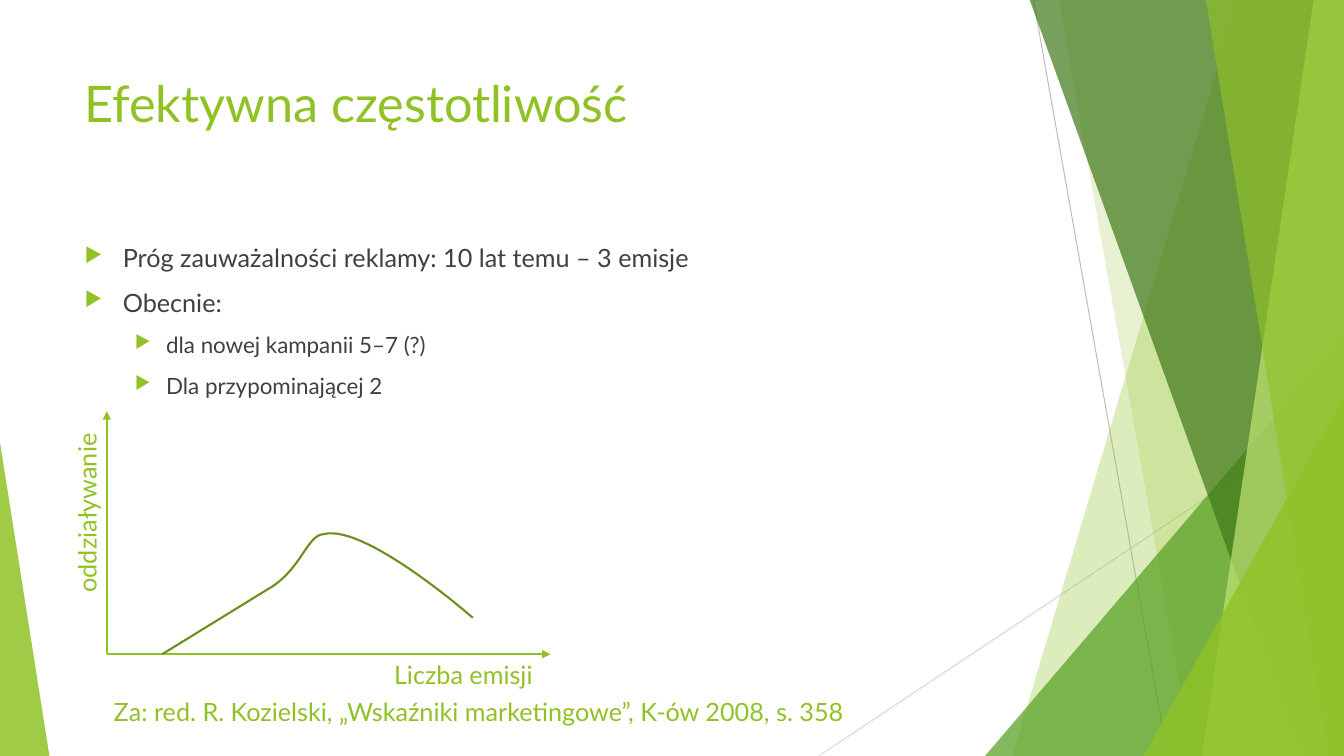
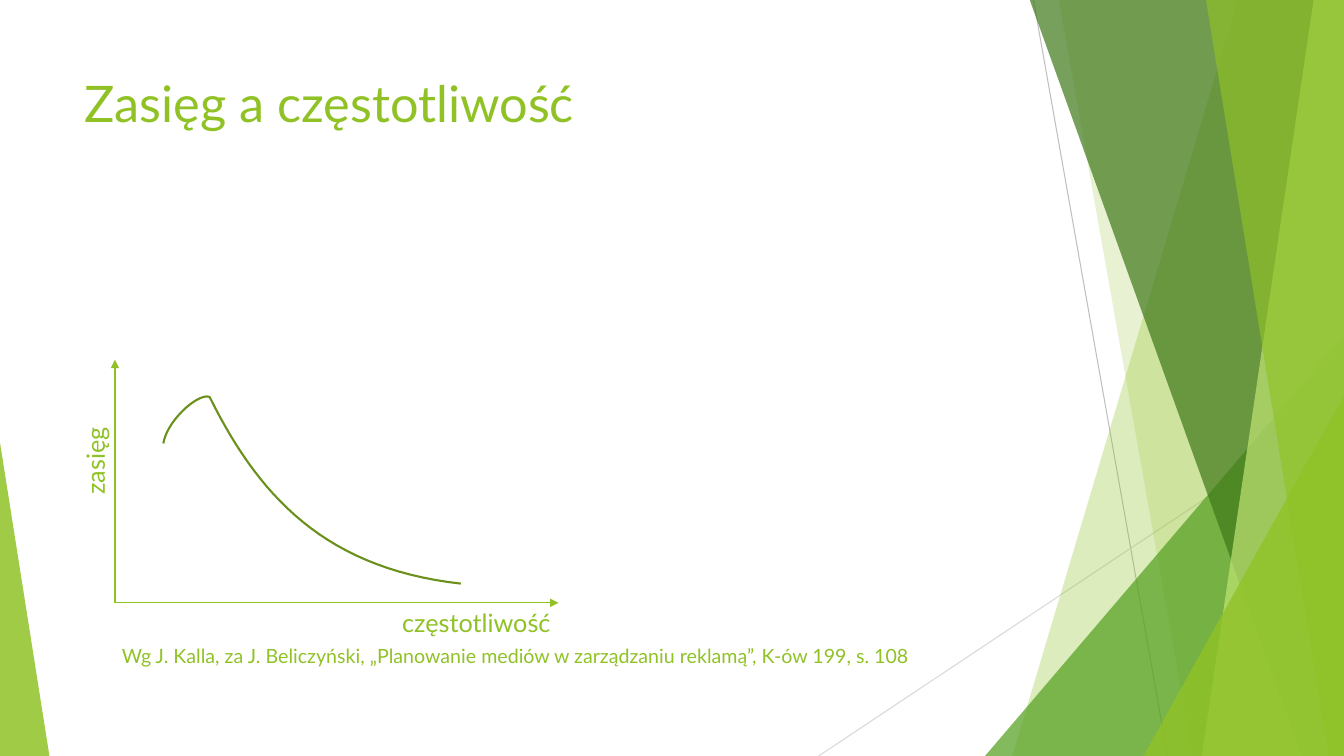
"""Build two slides on advertising frequency and reach with hand-drawn response curves."""
from dataclasses import dataclass
from math import comb

from lxml import etree
from pptx import Presentation
from pptx.dml.color import RGBColor
from pptx.enum.shapes import MSO_CONNECTOR, MSO_SHAPE
from pptx.enum.text import MSO_ANCHOR, MSO_AUTO_SIZE
from pptx.oxml.ns import qn
from pptx.util import Inches, Pt

STRAIGHT = MSO_CONNECTOR.STRAIGHT
TRIANGLE = MSO_SHAPE.ISOSCELES_TRIANGLE
TOP = MSO_ANCHOR.TOP
FIT_SHAPE = MSO_AUTO_SIZE.SHAPE_TO_FIT_TEXT
FIXED_SHAPE = MSO_AUTO_SIZE.NONE

WIDTH, HEIGHT = 13.33, 7.5
BAND_TOP = -0.01
FONT = "Lato"
COLORS = {
    "accent": "90C226",
    "leaf": "54A021",
    "forest": "3F7819",
    "pale": "C0E474",
    "curve": "6B901C",
    "body": "404040",
    "gray": "BFBFBF",
    "light_gray": "D9D9D9",
}
LABEL_FRAME = {"word_wrap": False, "auto_size": FIT_SHAPE, "vertical_anchor": TOP}
BLOCK_FRAME = {"word_wrap": True, "auto_size": FIXED_SHAPE, "vertical_anchor": TOP}
AXIS_WIDTH, AXIS_HEIGHT = 4.4, 2.41
LABEL_HEIGHT = 0.4

Point = tuple[float, float]


@dataclass(frozen=True)
class Ray:
    start: Point
    end: Point
    color: str


@dataclass(frozen=True)
class Band:
    top_left: float
    bottom_left: float
    color: str
    opacity: int


@dataclass(frozen=True)
class Wedge:
    left: float
    top: float
    width: float
    apex: float
    color: str
    opacity: int


@dataclass(frozen=True)
class Bullet:
    text: str
    level: int = 0


@dataclass(frozen=True)
class BulletStyle:
    size: int
    margin: float
    hanging: float


@dataclass(frozen=True)
class Label:
    text: str
    width: float


@dataclass(frozen=True)
class Source:
    text: str
    left: float
    top: float
    width: float
    height: float
    size: int


@dataclass(frozen=True)
class Diagram:
    origin: Point
    vertical: Label
    horizontal: Label
    curve_start: Point
    curve_segments: tuple[tuple[Point, ...], ...]


@dataclass(frozen=True)
class Page:
    title: str
    bullets: tuple[Bullet, ...]
    diagram: Diagram
    source: Source


RAYS = (
    Ray((10.25, 0), (11.58, HEIGHT), "gray"),
    Ray((WIDTH, 4.03), (8.12, HEIGHT), "light_gray"),
)
BACKDROP = (
    Band(12.28, 10.04, "accent", 30),
    Band(10.5, 11.83, "accent", 20),
    Wedge(9.77, 3.33, 3.56, 1, "leaf", 72),
    Band(10.21, 12.91, "forest", 70),
    Band(13.03, 11.92, "pale", 70),
    Band(11.96, 13.18, "accent", 65),
    Wedge(11.34, 3.93, 1.99, 1, "accent", 80),
    Wedge(0, 4.39, 0.49, 0, "accent", 85),
)
BULLET_STYLES = (BulletStyle(18, 0.38, 0.38), BulletStyle(16, 0.81, 0.31))

PAGES = (
    Page(
        "Efektywna częstotliwość",
        (
            Bullet("Próg zauważalności reklamy: 10 lat temu – 3 emisje"),
            Bullet("Obecnie:"),
            Bullet("dla nowej kampanii 5–7 (?)", 1),
            Bullet("Dla przypominającej 2", 1),
        ),
        Diagram(
            (1.06, 6.49),
            Label("oddziaływanie", 1.81),
            Label("Liczba emisji", 1.68),
            (1.61, 6.49),
            (
                ((2.65, 5.85),),
                ((2.99, 5.66), (3.04, 5.31), (3.21, 5.3)),
                ((3.62, 5.19), (4.69, 6.13), (4.69, 6.13)),
            ),
        ),
        Source("Za: red. R. Kozielski, „Wskaźniki marketingowe”, K-ów 2008, s. 358",
               1.03, 6.86, 7.9, 0.4, 18),
    ),
    Page(
        "Zasięg a częstotliwość",
        (),
        Diagram(
            (1.14, 5.98),
            Label("zasięg", 0.89),
            Label("częstotliwość", 1.71),
            (1.62, 4.4),
            (
                ((1.66, 4.16), (1.98, 3.89), (2.08, 3.94)),
                ((2.57, 4.93), (3.23, 5.64), (4.57, 5.79)),
            ),
        ),
        Source("Wg J. Kalla, za J. Beliczyński, „Planowanie mediów w zarządzaniu reklamą”, K-ów 199, s. 108",
               1.11, 6.34, 8.57, 0.34, 14),
    ),
)


def rgb(name: str) -> RGBColor:
    return RGBColor.from_string(COLORS[name])


def apply(target, values: dict) -> None:
    for name, value in values.items():
        setattr(target, name, value)


def add_child(parent, tag: str, **attributes: str):
    return etree.SubElement(parent, qn(tag), attributes)


def style_text(paragraph, text: str, size: int, color: str) -> None:
    run = paragraph.add_run()
    run.text = text
    apply(run.font, {"name": FONT, "size": Pt(size)})
    run.font.color.rgb = rgb(color)


def add_frame(slide, left: float, top: float, width: float, height: float, values: dict):
    box = slide.shapes.add_textbox(Inches(left), Inches(top), Inches(width), Inches(height))
    apply(box.text_frame, values)
    return box


def add_text(slide, text: str, left: float, top: float, width: float, height: float,
             size: int = 18, frame: dict = LABEL_FRAME, rotation: int = 0) -> None:
    box = add_frame(slide, left, top, width, height, frame)
    box.rotation = rotation
    style_text(box.text_frame.paragraphs[0], text, size, "accent")


def add_line(slide, start: Point, end: Point, color: str, width: float, arrow: bool = False) -> None:
    line = slide.shapes.add_connector(STRAIGHT, *map(Inches, (*start, *end)))
    line.line.color.rgb = rgb(color)
    line.line.width = Pt(width)
    properties = line.line._get_or_add_ln()
    if arrow:
        add_child(properties, "a:tailEnd", type="triangle")
    add_child(line._element.spPr, "a:effectLst")


def add_outline(slide, points: list[Point], close: bool):
    start, *rest = [(Inches(x), Inches(y)) for x, y in points]
    builder = slide.shapes.build_freeform(*start)
    builder.add_line_segments(rest, close=close)
    outline = builder.convert_to_shape()
    outline.shadow.inherit = False
    return outline


def paint(shape, color: str, opacity: int) -> None:
    shape.shadow.inherit = False
    shape.line.fill.background()
    shape.fill.solid()
    shape.fill.fore_color.rgb = rgb(color)
    tint = shape._element.spPr.find(qn("a:solidFill"))[0]
    add_child(tint, "a:alpha", val=str(opacity * 1000))


def add_band(slide, band: Band) -> None:
    corners = [(band.top_left, BAND_TOP), (WIDTH, BAND_TOP), (WIDTH, HEIGHT), (band.bottom_left, HEIGHT)]
    paint(add_outline(slide, corners, True), band.color, band.opacity)


def add_wedge(slide, wedge: Wedge) -> None:
    triangle = slide.shapes.add_shape(
        TRIANGLE, *map(Inches, (wedge.left, wedge.top, wedge.width, HEIGHT - wedge.top)))
    triangle.adjustments[0] = wedge.apex
    paint(triangle, wedge.color, wedge.opacity)


def add_backdrop(slide) -> None:
    for ray in RAYS:
        add_line(slide, ray.start, ray.end, ray.color, 0.75)
    for part in BACKDROP:
        if isinstance(part, Band):
            add_band(slide, part)
        else:
            add_wedge(slide, part)


def add_bullets(slide, bullets: tuple[Bullet, ...]) -> None:
    frame = add_frame(slide, 0.74, 2.36, 9.4, 4.24, BLOCK_FRAME).text_frame
    for index, bullet in enumerate(bullets):
        paragraph = frame.add_paragraph() if index else frame.paragraphs[0]
        style = BULLET_STYLES[bullet.level]
        apply(paragraph, {"level": bullet.level, "space_before": Pt(10)})
        properties = paragraph._p.get_or_add_pPr()
        properties.set("marL", str(Inches(style.margin)))
        properties.set("indent", str(-Inches(style.hanging)))
        add_child(add_child(properties, "a:buClr"), "a:srgbClr", val=COLORS["accent"])
        add_child(properties, "a:buSzPct", val="80000")
        add_child(properties, "a:buChar", char="▶")
        style_text(paragraph, bullet.text, style.size, "body")


def bezier(controls: tuple[Point, ...], t: float) -> Point:
    degree = len(controls) - 1
    weights = [comb(degree, k) * t**k * (1 - t)**(degree - k) for k in range(degree + 1)]
    x, y = (sum(w * value for w, value in zip(weights, axis)) for axis in zip(*controls))
    return x, y


def add_curve(slide, start: Point, segments: tuple[tuple[Point, ...], ...]) -> None:
    points = [start]
    for segment in segments:
        controls = (points[-1], *segment)
        steps = 1 if len(segment) == 1 else 30
        points += [bezier(controls, step / steps) for step in range(1, steps + 1)]
    curve = add_outline(slide, points, False)
    curve.fill.background()
    curve.line.color.rgb = rgb("curve")
    curve.line.width = Pt(1.5)


def add_diagram(slide, diagram: Diagram) -> None:
    x, y = diagram.origin
    for end in ((x, y - AXIS_HEIGHT), (x + AXIS_WIDTH, y)):
        add_line(slide, diagram.origin, end, "accent", 1, arrow=True)
    vertical, horizontal = diagram.vertical, diagram.horizontal
    add_text(slide, vertical.text, x - 0.2 - vertical.width / 2, y - 1.42 - LABEL_HEIGHT / 2,
             vertical.width, LABEL_HEIGHT, rotation=270)
    add_text(slide, horizontal.text, x + 2.75, y, horizontal.width, LABEL_HEIGHT)
    add_curve(slide, diagram.curve_start, diagram.curve_segments)


def main() -> None:
    deck = Presentation()
    apply(deck, {"slide_width": Inches(WIDTH), "slide_height": Inches(HEIGHT)})
    for page in PAGES:
        slide = deck.slides.add_slide(deck.slide_layouts[6])
        add_backdrop(slide)
        add_text(slide, page.title, 0.74, 0.67, 9.4, 1.44, 36, BLOCK_FRAME)
        if page.bullets:
            add_bullets(slide, page.bullets)
        add_diagram(slide, page.diagram)
        source = page.source
        add_text(slide, source.text, source.left, source.top, source.width, source.height, source.size)
    deck.save("out.pptx")


if __name__ == "__main__":
    main()
